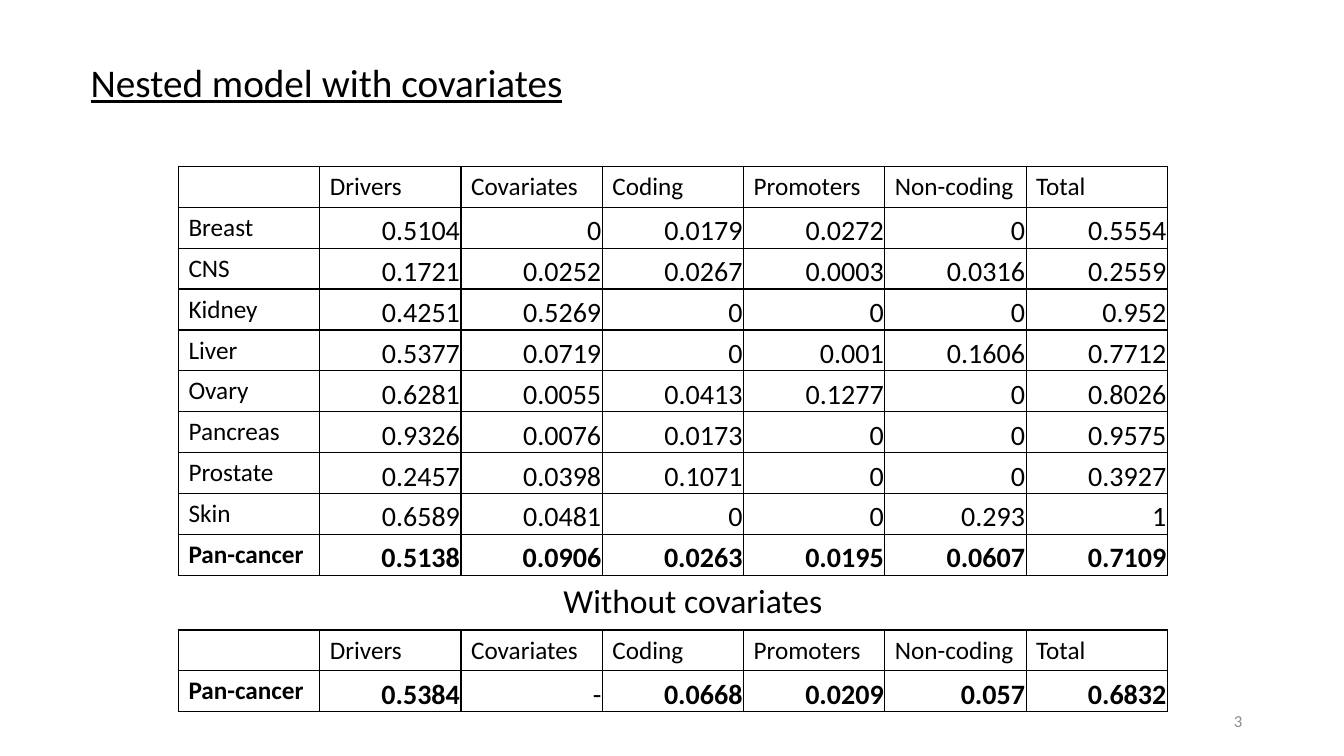
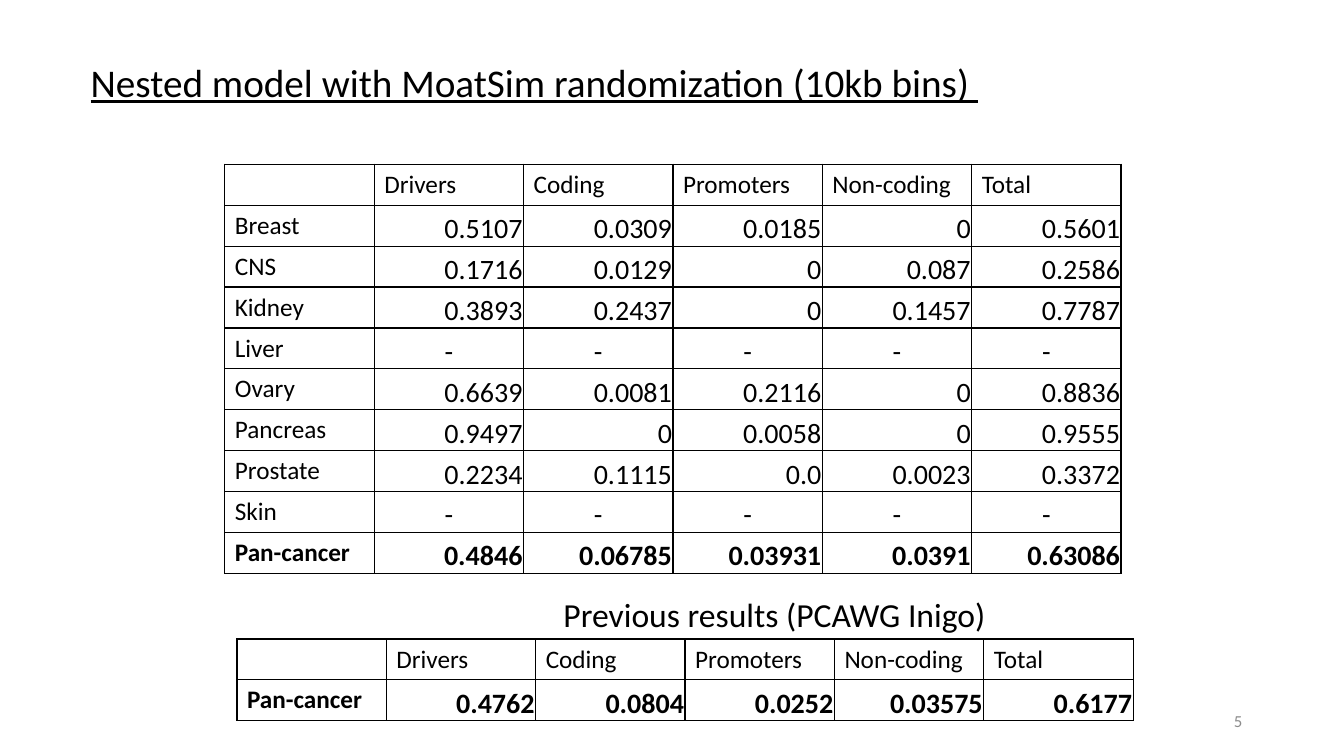
from dataclasses import dataclass

from lxml import etree
from pptx import Presentation
from pptx.dml.color import RGBColor
from pptx.enum.text import MSO_ANCHOR, MSO_AUTO_SIZE, PP_ALIGN
from pptx.oxml.ns import qn
from pptx.util import Inches, Pt

LEFT, CENTER, RIGHT = PP_ALIGN.LEFT, PP_ALIGN.CENTER, PP_ALIGN.RIGHT
TOP, MIDDLE, BOTTOM = MSO_ANCHOR.TOP, MSO_ANCHOR.MIDDLE, MSO_ANCHOR.BOTTOM
NO_FIT = MSO_AUTO_SIZE.NONE
TITLE_ONLY = 5


@dataclass(frozen=True)
class Theme:
    font: str = "Calibri"
    ink: str = "000000"
    muted: str = "8C8C8C"
    title: int = 28
    caption: int = 24
    value: int = 20
    label: int = 18
    number: int = 12
    border: int = 1


class Deck:
    def __init__(self, theme):
        self.theme = theme
        self.prs = Presentation()
        self.prs.slide_width, self.prs.slide_height = Inches(13.33), Inches(7.5)
        self.slide = None

    def fill_text(self, tf, text, size, color=None, align=LEFT, **extra):
        p = tf.paragraphs[0]
        p.alignment = align
        r = p.add_run()
        r.text = text
        formats = {"name": self.theme.font, "size": Pt(size), **extra}
        for key, value in formats.items():
            setattr(r.font, key, value)
        r.font.color.rgb = RGBColor.from_string(color or self.theme.ink)

    def add_slide(self, title):
        layout = self.prs.slide_layouts[TITLE_ONLY]
        self.slide = self.prs.slides.add_slide(layout)
        sp = self.slide.shapes.title
        sp.left, sp.top, sp.width, sp.height = map(Inches, (0.8, 0.53, 9.64, 0.57))
        tf = sp.text_frame
        tf.auto_size, tf.vertical_anchor, tf.word_wrap = NO_FIT, TOP, True
        self.fill_text(tf, title, self.theme.title, underline=True)

    def add_text(self, box, text, size, color=None, align=LEFT, anchor=TOP, wrap=True):
        tf = self.slide.shapes.add_textbox(*map(Inches, box)).text_frame
        tf.word_wrap, tf.vertical_anchor = wrap, anchor
        self.fill_text(tf, text, size, color, align)

    def add_caption(self, box, text):
        self.add_text(box, text, self.theme.caption, wrap=False)

    def add_number(self, number):
        self.add_text((9.42, 6.95, 3, 0.4), str(number), self.theme.number,
                      self.theme.muted, RIGHT, MIDDLE)

    def style_cell(self, cell):
        tcPr = cell._tc.get_or_add_tcPr()
        for side in ("a:lnL", "a:lnR", "a:lnT", "a:lnB"):
            ln = etree.SubElement(tcPr, qn(side), w=str(Pt(self.theme.border)))
            fill = etree.SubElement(ln, qn("a:solidFill"))
            etree.SubElement(fill, qn("a:srgbClr"), val=self.theme.ink)
        cell.fill.background()

    def add_value(self, cell, text, bold, align):
        margins = {"left": 0.01, "right": 0.01, "top": 0.01, "bottom": 0}
        for side, inset in margins.items():
            setattr(cell, f"margin_{side}", Inches(inset))
        cell.vertical_anchor = BOTTOM
        self.fill_text(cell.text_frame, text, self.theme.value, align=align, bold=bold)

    def add_table(self, box, columns, rows):
        left, top, width, height = map(Inches, box)
        n_rows, n_cols = len(rows) + 1, len(columns) + 1
        table = self.slide.shapes.add_table(
            n_rows, n_cols, left, top, width, height).table
        table.first_row = table.horz_banding = False
        for cell in table.iter_cells():
            self.style_cell(cell)

        # Header row
        for c, name in enumerate(columns, 1):
            self.fill_text(table.cell(0, c).text_frame, name, self.theme.label)

        # Body: the summary row is bold, a row without results is centred
        for i, (name, *values) in enumerate(rows, 1):
            bold = name == SUMMARY
            align = CENTER if set(values) == {"-"} else RIGHT
            self.fill_text(table.cell(i, 0).text_frame, name, self.theme.label, bold=bold)
            for c, value in enumerate(values, 1):
                self.add_value(table.cell(i, c), value, bold and value != "-", align)


def split_rows(text):
    return [line.split() for line in text.strip().splitlines()]


# Content
SUMMARY = "Pan-cancer"
COLUMNS = ["Drivers", "Coding", "Promoters", "Non-coding", "Total"]
COVARIATE_COLUMNS = [COLUMNS[0], "Covariates", *COLUMNS[1:]]

COVARIATE_ROWS = split_rows("""
Breast      0.5104  0       0.0179  0.0272  0       0.5554
CNS         0.1721  0.0252  0.0267  0.0003  0.0316  0.2559
Kidney      0.4251  0.5269  0       0       0       0.952
Liver       0.5377  0.0719  0       0.001   0.1606  0.7712
Ovary       0.6281  0.0055  0.0413  0.1277  0       0.8026
Pancreas    0.9326  0.0076  0.0173  0       0       0.9575
Prostate    0.2457  0.0398  0.1071  0       0       0.3927
Skin        0.6589  0.0481  0       0       0.293   1
Pan-cancer  0.5138  0.0906  0.0263  0.0195  0.0607  0.7109
""")
NO_COVARIATE_ROWS = split_rows("Pan-cancer 0.5384 - 0.0668 0.0209 0.057 0.6832")

MOATSIM_ROWS = split_rows("""
Breast      0.5107  0.0309   0.0185   0       0.5601
CNS         0.1716  0.0129   0        0.087   0.2586
Kidney      0.3893  0.2437   0        0.1457  0.7787
Liver       -       -        -        -       -
Ovary       0.6639  0.0081   0.2116   0       0.8836
Pancreas    0.9497  0        0.0058   0       0.9555
Prostate    0.2234  0.1115   0.0      0.0023  0.3372
Skin        -       -        -        -       -
Pan-cancer  0.4846  0.06785  0.03931  0.0391  0.63086
""")
PREVIOUS_ROWS = split_rows("Pan-cancer 0.4762 0.0804 0.0252 0.03575 0.6177")


def main():
    deck = Deck(Theme())

    # Covariates
    deck.add_slide("Nested model with covariates")
    deck.add_table((1.77, 1.65, 9.81, 4.06), COVARIATE_COLUMNS, COVARIATE_ROWS)
    deck.add_number(3)
    deck.add_caption((5.49, 5.7, 2.8, 0.5), "Without covariates")
    deck.add_table((1.77, 6.25, 9.81, 0.81), COVARIATE_COLUMNS, NO_COVARIATE_ROWS)

    # Randomization
    deck.add_slide("Nested model with MoatSim randomization (10kb bins) ")
    deck.add_table((2.23, 1.63, 8.89, 4.06), COLUMNS, MOATSIM_ROWS)
    deck.add_number(5)
    deck.add_caption((5.49, 5.84, 4.42, 0.5), "Previous results (PCAWG Inigo)")
    deck.add_table((2.35, 6.34, 8.89, 0.81), COLUMNS, PREVIOUS_ROWS)

    deck.prs.save("out.pptx")


if __name__ == "__main__":
    main()
